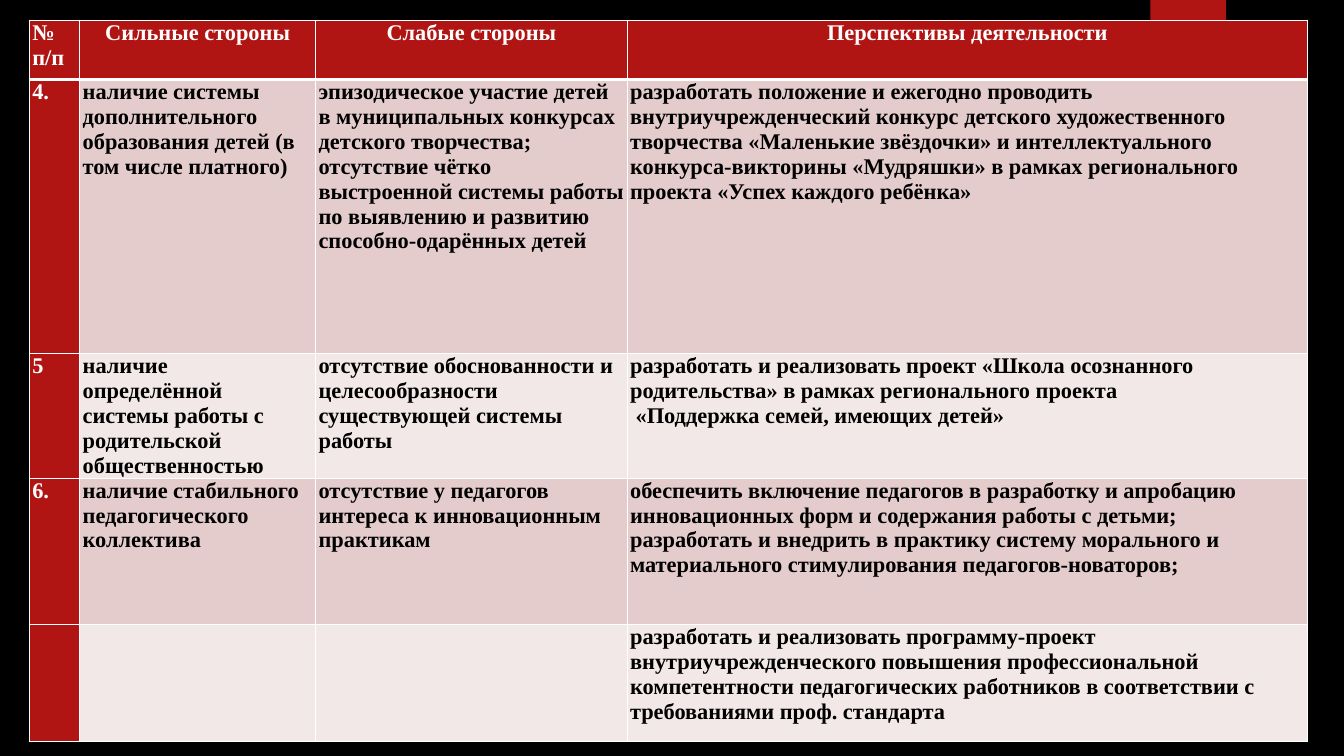
from lxml import etree
from pptx import Presentation
from pptx.dml.color import RGBColor
from pptx.enum.shapes import MSO_SHAPE
from pptx.enum.text import PP_ALIGN
from pptx.oxml.ns import qn
from pptx.util import Inches, Pt

RECTANGLE = MSO_SHAPE.RECTANGLE
LEFT, CENTER = PP_ALIGN.LEFT, PP_ALIGN.CENTER
BLACK = RGBColor(0x00, 0x00, 0x00)
WHITE = RGBColor(0xFF, 0xFF, 0xFF)
RED = RGBColor(0xB0, 0x15, 0x13)
PINK = RGBColor(0xE4, 0xCC, 0xCC)
PALE = RGBColor(0xF2, 0xE8, 0xE7)

COLUMN_WIDTHS = [0.5, 2.34, 3.09, 6.75]
ROW_HEIGHTS = [0.59, 2.72, 1.2, 1.45, 1.16]
ROWS = [
    ["№\nп/п", "Сильные стороны", "Слабые стороны", "Перспективы деятельности"],
    ["4.",
     "наличие системы дополнительного образования детей (в том числе платного)",
     "эпизодическое участие детей в муниципальных конкурсах детского творчества;\n"
     "отсутствие чётко выстроенной системы работы по выявлению и развитию "
     "способно-одарённых детей",
     "разработать положение и ежегодно проводить внутриучрежденческий конкурс "
     "детского художественного творчества «Маленькие звёздочки» и интеллектуального "
     "конкурса-викторины «Мудряшки» в рамках регионального проекта "
     "«Успех каждого ребёнка»"],
    ["5",
     "наличие определённой системы работы с родительской общественностью",
     "отсутствие обоснованности и целесообразности существующей системы работы",
     "разработать и реализовать проект «Школа осознанного родительства» "
     "в рамках регионального проекта\n «Поддержка семей, имеющих детей»"],
    ["6.",
     "наличие стабильного педагогического коллектива",
     "отсутствие у педагогов интереса к инновационным практикам",
     "обеспечить включение педагогов в разработку и апробацию инновационных форм "
     "и содержания работы с детьми;\n"
     "разработать и внедрить в практику систему морального и материального "
     "стимулирования педагогов-новаторов;"],
    ["", "", "",
     "разработать и реализовать программу-проект внутриучрежденческого повышения "
     "профессиональной компетентности педагогических работников в соответствии "
     "с требованиями проф. стандарта"],
]


class SlideBuilder:
    """Holds the text style and the current slide."""

    def __init__(self, s, font="Times New Roman", size=16):
        self.s, self.font, self.size = s, font, size

    def background(self, color):
        self.s.background.fill.solid()
        self.s.background.fill.fore_color.rgb = color

    def rectangle(self, x, y, w, h, color):
        sp = self.s.shapes.add_shape(RECTANGLE, Inches(x), Inches(y), Inches(w), Inches(h))
        sp.shadow.inherit = False
        sp.fill.solid()
        sp.fill.fore_color.rgb = color
        sp.line.fill.background()

    def borders(self, cell, widths):
        tcPr = cell._tc.get_or_add_tcPr()
        for side, width in widths.items():
            ln = etree.SubElement(tcPr, qn(f"a:ln{side}"), w=str(Pt(width)))
            fill = etree.SubElement(ln, qn("a:solidFill"))
            etree.SubElement(fill, qn("a:srgbClr"), val=str(WHITE))

    def cell(self, cell, text, fill, color, align):
        cell.margin_left = cell.margin_right = Inches(0.03)
        cell.margin_top = cell.margin_bottom = 0
        cell.fill.solid()
        cell.fill.fore_color.rgb = fill
        cell.text_frame.text = text
        for p in cell.text_frame.paragraphs:
            p.alignment = align
            for r in p.runs:
                r.font.name, r.font.size, r.font.bold = self.font, Pt(self.size), True
                r.font.color.rgb = color

    def table(self, x, y, widths, heights, rows):
        frame = self.s.shapes.add_table(len(rows), len(widths), Inches(x), Inches(y),
                                        Inches(sum(widths)), Inches(sum(heights)))
        table = frame.table
        for column, width in zip(table.columns, widths):
            column.width = Inches(width)
        for i, (row, height) in enumerate(zip(rows, heights)):
            table.rows[i].height = Inches(height)
            for j, text in enumerate(row):
                cell = table.cell(i, j)
                self.borders(cell, {"L": 1, "R": 1, "T": 3 if i == 1 else 1,
                                    "B": 3 if i == 0 else 1})
                accent = i == 0 or j == 0
                fill = RED if accent else PINK if i % 2 else PALE
                self.cell(cell, text, fill, WHITE if accent else BLACK,
                          CENTER if i == 0 and j > 0 else LEFT)


def main():
    prs = Presentation()
    prs.slide_width, prs.slide_height = Inches(13.33), Inches(7.5)
    builder = SlideBuilder(prs.slides.add_slide(prs.slide_layouts[6]))
    builder.background(BLACK)
    builder.rectangle(11.41, 0, 0.75, 1.25, RED)
    builder.table(0.29, 0.2, COLUMN_WIDTHS, ROW_HEIGHTS, ROWS)
    prs.save("out.pptx")


if __name__ == "__main__":
    main()
